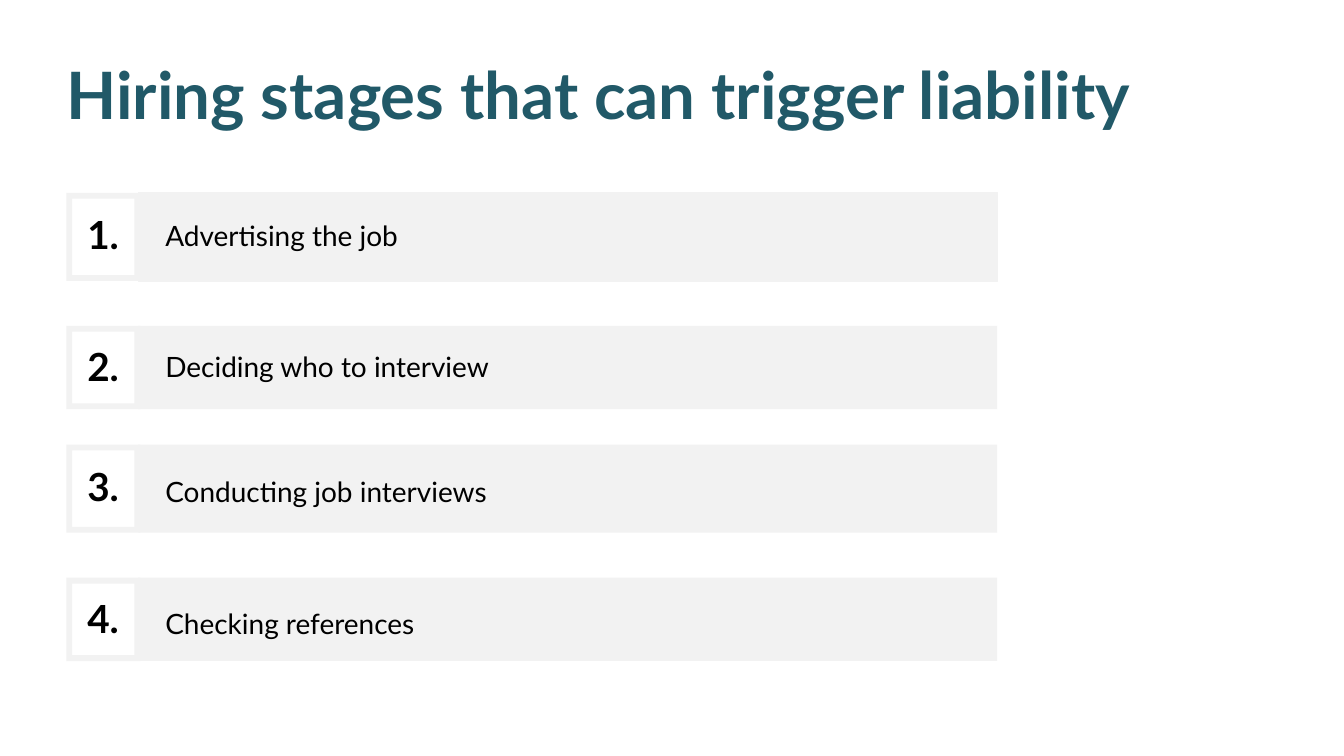
from pptx import Presentation
from pptx.dml.color import RGBColor
from pptx.enum.shapes import MSO_SHAPE as Kind
from pptx.enum.text import MSO_ANCHOR as Anchor, MSO_AUTO_SIZE as Fit, PP_ALIGN as Align
from pptx.util import Cm, Pt

GREY, TEAL, BLACK = "F2F2F2", "215968", "000000"


def tint(code):
    return RGBColor.from_string(code)


class Deck:
    font = "Lato"

    def __init__(self, wide, high):
        self.show = Presentation()
        self.show.slide_width = Cm(wide)
        self.show.slide_height = Cm(high)
        self.slide = self.show.slides.add_slide(self.show.slide_layouts[5])
        self.shapes = self.slide.shapes

    def fill_text(self, shape, text, size, lead, color, bold):
        frame = shape.text_frame
        frame.word_wrap = True
        frame.auto_size = Fit.NONE
        frame.vertical_anchor = Anchor.TOP
        frame.margin_left = frame.margin_right = 0
        frame.margin_top = frame.margin_bottom = 0
        para = frame.paragraphs[0]
        para.alignment = Align.LEFT
        para.line_spacing = Pt(lead)
        para.space_before = Pt(0)
        run = para.add_run()
        run.text = text
        run.font.name = self.font
        run.font.size = Pt(size)
        run.font.bold = bold
        run.font.color.rgb = tint(color)

    def title(self, text, left, top, wide, high):
        shape = self.shapes.title
        shape.left, shape.top = Cm(left), Cm(top)
        shape.width, shape.height = Cm(wide), Cm(high)
        self.fill_text(shape, text, 70, 79.8, TEAL, True)

    def label(self, text, left, top, wide, high, size, lead, bold=False):
        box = self.shapes.add_textbox(Cm(left), Cm(top), Cm(wide), Cm(high))
        self.fill_text(box, text, size, lead, BLACK, bold)

    def paint(self, shape, edge=False):
        shape.shadow.inherit = False
        shape.fill.solid()
        shape.fill.fore_color.rgb = tint(GREY)
        if edge:
            shape.line.color.rgb = tint(GREY)
            shape.line.width = Pt(0.75)
        else:
            shape.line.fill.background()

    def bar(self, left, top, wide, high, edge):
        shape = self.shapes.add_shape(Kind.RECTANGLE, Cm(left), Cm(top), Cm(wide), Cm(high))
        self.paint(shape, edge)

    def frame(self, left, top, wide, high, rim):
        right, low = left + wide, top + high
        pen = self.shapes.build_freeform(Cm(left), Cm(top))
        outer = [(left, low), (right, low), (right, top)]
        pen.add_line_segments([(Cm(x), Cm(y)) for x, y in outer])
        pen.move_to(Cm(right - rim), Cm(low - rim))
        inner = [(left + rim, low - rim), (left + rim, top + rim), (right - rim, top + rim)]
        pen.add_line_segments([(Cm(x), Cm(y)) for x, y in inner])
        self.paint(pen.convert_to_shape())

    def save(self):
        self.show.save("out.pptx")


def main():
    deck = Deck(50.8, 28.58)
    deck.title("Hiring stages that can trigger liability", 2.51, 2.18, 42.06, 2.84)
    stages = [
        ("Advertising the job", 7.29, 3.33, 8.05, 8.05),
        ("Deciding who to interview", 12.32, 3.15, 13.06, 13),
        ("Conducting job interviews", 16.81, 3.33, 17.58, 17.73),
        ("Checking references", 21.84, 3.15, 22.58, 22.71),
    ]
    for num, (text, top, high, num_top, text_top) in enumerate(stages, 1):
        deck.bar(5.23, top, 32.46, high, edge=num == 1)
        deck.frame(2.51, top, 2.79, high, 0.22)
        deck.label(f"{num}.", 3.3, num_top, 1.55, 1.7, 41.5, 47.4, bold=True)
        deck.label(text, 6.25, text_top, 30.76, 1.4, 30, 42)
    deck.save()


if __name__ == "__main__":
    main()
